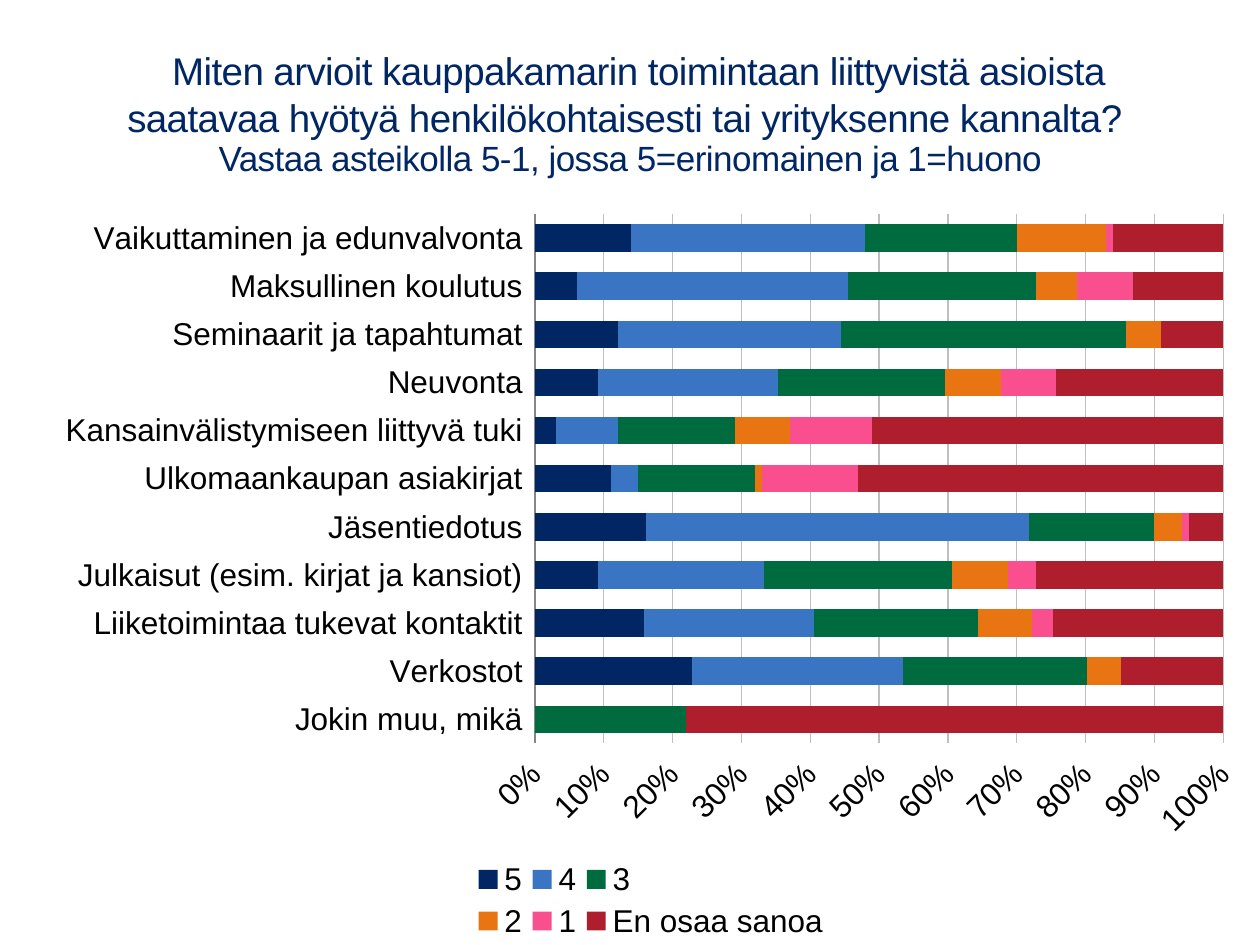
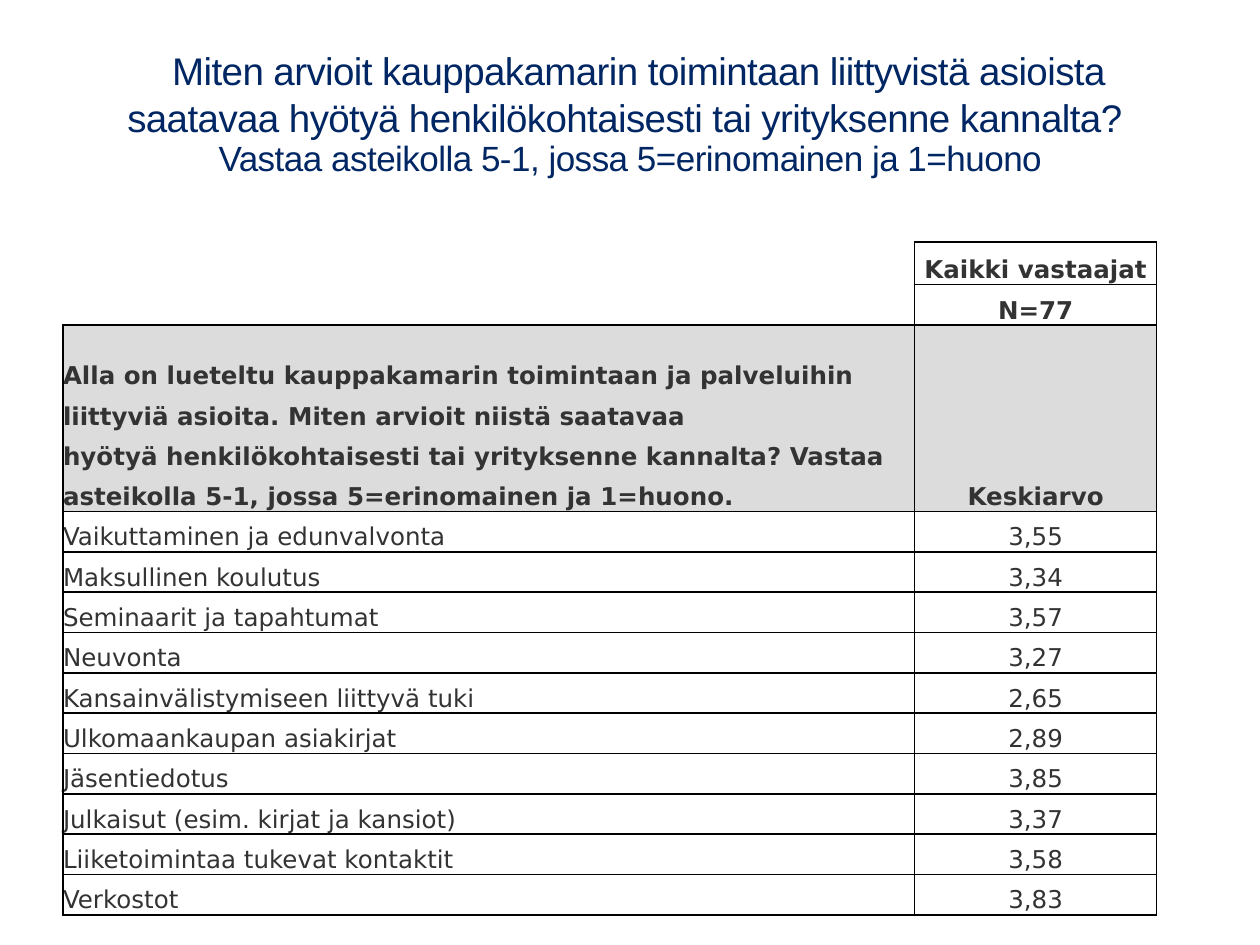
import copy

import lxml.etree
import pptx
import pptx.chart.data
import pptx.dml.color
import pptx.enum.chart
import pptx.enum.text
import pptx.oxml
import pptx.oxml.ns
import pptx.util

Inches = pptx.util.Inches
Pt = pptx.util.Pt
RGBColor = pptx.dml.color.RGBColor
PP_ALIGN = pptx.enum.text.PP_ALIGN
qn = pptx.oxml.ns.qn

NAVY = RGBColor(0x00, 0x26, 0x63)
BLUE = RGBColor(0x3A, 0x75, 0xC4)
GREEN = RGBColor(0x00, 0x6B, 0x3F)
ORANGE = RGBColor(0xE8, 0x75, 0x11)
PINK = RGBColor(0xF9, 0x4F, 0x8E)
RED = RGBColor(0xAF, 0x1E, 0x2D)
BLACK = RGBColor(0x00, 0x00, 0x00)
WHITE = RGBColor(0xFF, 0xFF, 0xFF)
GRID_GREY = RGBColor(0xBF, 0xBF, 0xBF)
AXIS_GREY = RGBColor(0x86, 0x86, 0x86)
HEADER_GREY = RGBColor(0xDC, 0xDC, 0xDC)
TEXT_GREY = RGBColor(0x33, 0x33, 0x33)

TITLE_BOX = (0.59, 0.17, 8.82, 1.3)
CHART_BOX = (0.33, 1.58, 9.67, 5.92)
TABLE_BOX = (0.5, 1.92, 8.68, 5.34)

TITLE_FONT = {"name": "Arial", "bold": False}
CHART_FONT = {"name": "Arial", "size": Pt(18), "bold": False}
TABLE_FONT = {"name": "DejaVu Sans", "size": Pt(14)}

NBSP = chr(160)
BENEFIT = f"hyötyä{NBSP}henkilökohtaisesti tai yrityksenne kannalta?"
QUESTION = (f"Miten arvioit{NBSP}kauppakamarin toimintaan liittyvistä asioista "
            f"saatavaa {BENEFIT} ")
SCALE = "Vastaa asteikolla 5-1, jossa 5=erinomainen ja 1=huono"
TABLE_QUESTION = ("Alla on lueteltu kauppakamarin toimintaan ja palveluihin liittyviä asioita. "
                  f"Miten arvioit{NBSP}niistä saatavaa {BENEFIT} {SCALE}.")

SERVICES = [
    "Vaikuttaminen ja edunvalvonta",
    "Maksullinen koulutus",
    "Seminaarit ja tapahtumat",
    "Neuvonta",
    "Kansainvälistymiseen liittyvä tuki",
    "Ulkomaankaupan asiakirjat",
    "Jäsentiedotus",
    "Julkaisut (esim. kirjat ja kansiot)",
    "Liiketoimintaa tukevat kontaktit",
    "Verkostot",
]
AVERAGES = ["3,55", "3,34", "3,57", "3,27", "2,65", "2,89", "3,85", "3,37", "3,58", "3,83"]
RATINGS = [
    ("5", NAVY, (14, 6, 12, 9, 3, 11, 16, 9, 16, 23, 0)),
    ("4", BLUE, (34, 39, 32, 26, 9, 4, 55, 24, 25, 31, 0)),
    ("3", GREEN, (22, 27, 41, 24, 17, 17, 18, 27, 24, 27, 22)),
    ("2", ORANGE, (13, 6, 5, 8, 8, 1, 4, 8, 8, 5, 0)),
    ("1", PINK, (1, 8, 0, 8, 12, 14, 1, 4, 3, 0, 0)),
    ("En osaa sanoa", RED, (16, 13, 9, 24, 51, 53, 5, 27, 25, 15, 78)),
]


def set_attrs(obj, values):
    for name, value in values.items():
        setattr(obj, name, value)


def set_font(font, values, color):
    set_attrs(font, values)
    font.color.rgb = color


def add_titled_slide(prs, box):
    slide = prs.slides.add_slide(prs.slide_layouts[5])
    sp = slide.shapes.title
    set_attrs(sp, dict(zip(("left", "top", "width", "height"), map(Inches, box))))
    tf = sp.text_frame
    set_attrs(tf, {"word_wrap": True, "auto_size": pptx.enum.text.MSO_AUTO_SIZE.NONE,
                   "vertical_anchor": pptx.enum.text.MSO_ANCHOR.BOTTOM})
    p = tf.paragraphs[0]
    set_attrs(p, {"alignment": PP_ALIGN.CENTER, "line_spacing": 0.9, "space_before": Pt(0)})
    for text, size in ((" ", 36), (QUESTION, 22), (SCALE, 20)):
        if text == SCALE:
            p.add_line_break()
            p._p.findall(qn("a:br"))[-1].append(copy.deepcopy(r._r.rPr))
        r = p.add_run()
        r.text = text
        set_font(r.font, {**TITLE_FONT, "size": Pt(size)}, NAVY)
        r._r.get_or_add_rPr().set("spc", "-30")
    return slide


def make_layout(x, y, w, h, inner=False):
    layout = lxml.etree.Element(qn("c:layout"))
    manual = lxml.etree.SubElement(layout, qn("c:manualLayout"))
    values = {"layoutTarget": "inner"} if inner else {}
    values |= {"xMode": "edge", "yMode": "edge", "x": x, "y": y, "w": w, "h": h}
    for name, value in values.items():
        lxml.etree.SubElement(manual, qn(f"c:{name}")).set("val", str(value))
    return layout


def replace_layout(parent, layout, index):
    old = parent.find(qn("c:layout"))
    if old is not None:
        parent.remove(old)
    parent.insert(index, layout)


def add_rating_chart(slide, box):
    data = pptx.chart.data.CategoryChartData(number_format="0")
    data.categories = SERVICES + ["Jokin muu, mikä"]
    for name, _, values in RATINGS:
        data.add_series(name, values)
    chart = slide.shapes.add_chart(
        pptx.enum.chart.XL_CHART_TYPE.BAR_STACKED_100, *map(Inches, box), data).chart
    chart.has_title = False
    set_font(chart.font, CHART_FONT, BLACK)

    plot = chart.plots[0]
    set_attrs(plot, {"gap_width": 75, "overlap": 100, "vary_by_categories": False})
    for series, (_, color, _) in zip(plot.series, RATINGS):
        series.format.fill.solid()
        series.format.fill.fore_color.rgb = color

    no_tick = pptx.enum.chart.XL_TICK_MARK.NONE
    label_position = pptx.enum.chart.XL_TICK_LABEL_POSITION
    category_axis, value_axis = chart.category_axis, chart.value_axis
    for axis in (category_axis, value_axis):
        set_attrs(axis, {"major_tick_mark": no_tick, "minor_tick_mark": no_tick})
        set_font(axis.tick_labels.font, CHART_FONT, BLACK)
    set_attrs(category_axis, {"reverse_order": True, "has_major_gridlines": False,
                              "tick_label_position": label_position.LOW})
    category_axis.format.line.color.rgb = AXIS_GREY
    set_attrs(value_axis, {"minimum_scale": 0, "maximum_scale": 1, "major_unit": 0.1,
                           "has_major_gridlines": True,
                           "tick_label_position": label_position.HIGH})
    set_attrs(value_axis.tick_labels, {"number_format": "0%", "number_format_is_linked": False})
    value_axis._element.find(qn("c:txPr")).find(qn("a:bodyPr")).set("rot", "-2700000")
    value_axis.format.line.fill.background()
    grid = value_axis.major_gridlines.format.line
    grid.color.rgb = GRID_GREY
    grid.width = Pt(0.75)

    chart.has_legend = True
    legend = chart.legend
    set_attrs(legend, {"position": pptx.enum.chart.XL_LEGEND_POSITION.BOTTOM,
                       "include_in_layout": False})
    set_font(legend.font, CHART_FONT, BLACK)
    plot_area = chart._chartSpace.chart.plotArea
    replace_layout(plot_area, make_layout(0.405, 0.02, 0.565, 0.71, inner=True), 0)
    replace_layout(legend._element, make_layout(0.35, 0.88, 0.3, 0.12), 1)


def set_borders(cell, sides):
    tc_pr = cell._tc.get_or_add_tcPr()
    for i, side in enumerate("LRTB"):
        ln = lxml.etree.Element(qn(f"a:ln{side}"))
        ln.set("w", str(Pt(1)))
        if side in sides:
            fill = lxml.etree.SubElement(ln, qn("a:solidFill"))
            lxml.etree.SubElement(fill, qn("a:srgbClr")).set("val", str(BLACK))
        else:
            lxml.etree.SubElement(ln, qn("a:noFill"))
        tc_pr.insert(i, ln)


def fill_cell(cell, text, color, align, bold):
    set_attrs(cell, {"margin_left": 0, "margin_right": 0, "margin_top": 0, "margin_bottom": 0,
                     "vertical_anchor": pptx.enum.text.MSO_ANCHOR.BOTTOM})
    if color is None:
        cell.fill.background()
    else:
        cell.fill.solid()
        cell.fill.fore_color.rgb = color
    if text:
        p = cell.text_frame.paragraphs[0]
        set_attrs(p, {"alignment": align, "line_spacing": 1.4})
        r = p.add_run()
        r.text = text
        set_font(r.font, {**TABLE_FONT, "bold": bold}, TEXT_GREY)


def add_average_table(slide, box):
    rows = [("", "Kaikki vastaajat"), ("", "N=77"), (TABLE_QUESTION, "Keskiarvo"),
            *zip(SERVICES, AVERAGES)]
    table = slide.shapes.add_table(len(rows), 2, *map(Inches, box)).table
    set_attrs(table, {"first_row": False, "horz_banding": False})
    for column, width in zip(table.columns, (6.76, 1.92)):
        column.width = Inches(width)
    heights = [0.34, 0.32, 1.48] + [0.32] * len(SERVICES)
    for i, (texts, height) in enumerate(zip(rows, heights)):
        table.rows[i].height = Inches(height)
        for j, text in enumerate(texts):
            cell = table.cell(i, j)
            color = HEADER_GREY if i == 2 else WHITE if i > 2 and j else None
            fill_cell(cell, text, color, PP_ALIGN.CENTER if j else PP_ALIGN.LEFT, i < 3)
            set_borders(cell, "RB" if i < 2 and j == 0 else "LRTB")
    table.cell(0, 0).merge(table.cell(1, 0))


def main():
    prs = pptx.Presentation()
    set_attrs(prs, {"slide_width": Inches(10), "slide_height": Inches(7.5)})
    add_rating_chart(add_titled_slide(prs, TITLE_BOX), CHART_BOX)
    add_average_table(add_titled_slide(prs, TITLE_BOX), TABLE_BOX)
    prs.save("out.pptx")


if __name__ == "__main__":
    main()
